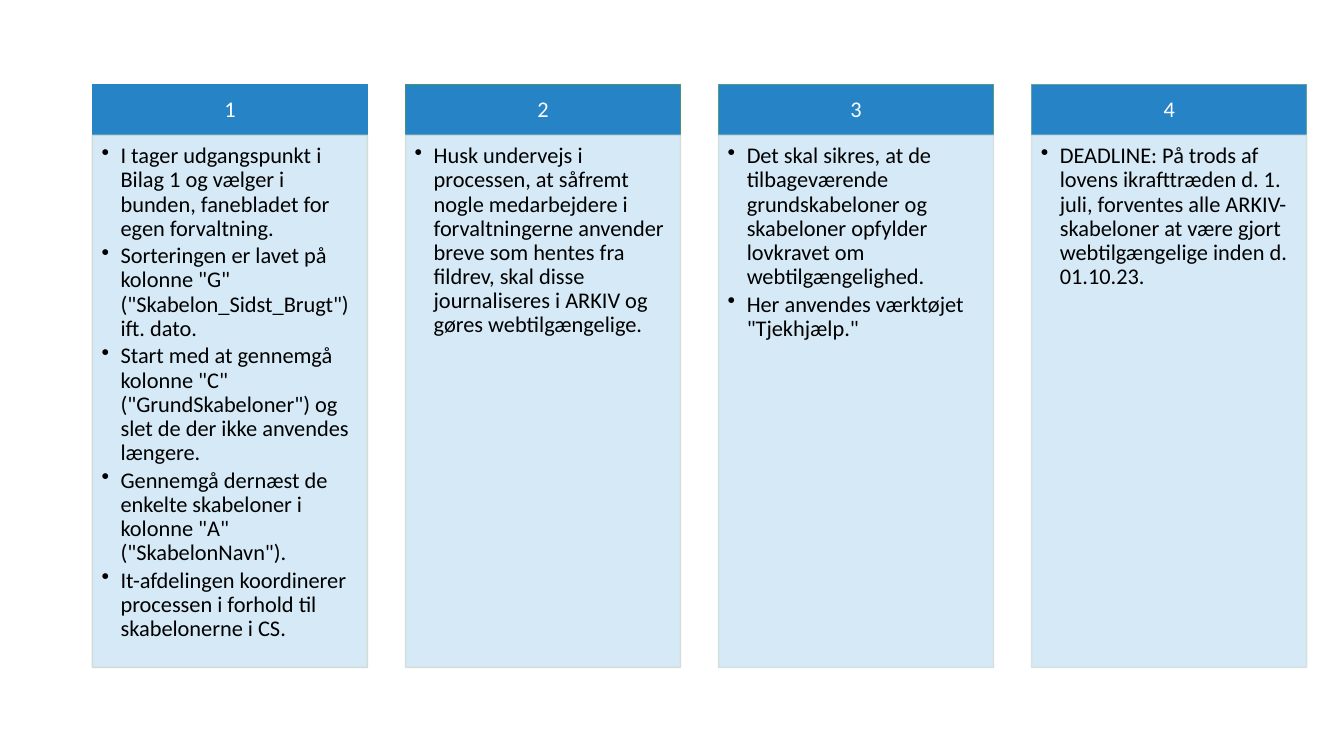
from pptx import Presentation
from pptx import util as u
from pptx.dml.color import RGBColor
from pptx.enum import shapes, text
from pptx.oxml.ns import qn
from lxml import etree

COLORS = {"head": "2683C6", "body": "D1E7F6", "light": "FFFFFF", "dark": "000000"}
LEFT, TOP, WIDTH, PITCH = 2.33, 2.13, 6.93, 7.89
HEAD, BODY = 1.28, 13.41

# Header outline, body outline, bullet points
STEPS = [
    ("2683C6", "CEDAD1", [
        "I tager udgangspunkt i Bilag 1 og vælger i bunden, fanebladet for egen forvaltning.",
        'Sorteringen er lavet på kolonne "G" ("Skabelon_Sidst_Brugt") ift. dato.',
        'Start med at gennemgå kolonne "C" ("GrundSkabeloner") og slet de der ikke '
        "anvendes længere.",
        'Gennemgå dernæst de enkelte skabeloner i kolonne "A" ("SkabelonNavn").',
        "It-afdelingen koordinerer processen i forhold til skabelonerne i CS.",
    ]),
    ("49926E", "D0DCD5", [
        "Husk undervejs i processen, at såfremt nogle medarbejdere i forvaltningerne "
        "anvender breve som hentes fra fildrev, skal disse journaliseres i ARKIV og "
        "gøres webtilgængelige.",
    ]),
    ("549C88", "D1DEDA", [
        "Det skal sikres, at de tilbageværende grundskabeloner og skabeloner opfylder "
        "lovkravet om webtilgængelighed.",
        'Her anvendes værktøjet "Tjekhjælp."',
    ]),
    ("62A39F", "D3E0DF", [
        "DEADLINE: På trods af lovens ikrafttræden d. 1. juli, forventes alle "
        "ARKIV-skabeloner at være gjort webtilgængelige inden d. 01.10.23.",
    ]),
]


def add_box(left, top, height, fill, edge, insets):
    box = slide.shapes.add_shape(shapes.MSO_SHAPE.RECTANGLE, u.Cm(left), u.Cm(top),
                                 u.Cm(WIDTH), u.Cm(height))
    box.shadow.inherit = False
    box.fill.solid()
    box.fill.fore_color.rgb = RGBColor.from_string(fill)
    box.line.color.rgb = RGBColor.from_string(edge)
    box.line.width = u.Pt(1)
    frame = box.text_frame
    frame.word_wrap = True
    (frame.margin_left, frame.margin_top,
     frame.margin_right, frame.margin_bottom) = map(u.Cm, insets)
    return box


def add_lines(frame, lines, color, align, after):
    for i, line in enumerate(lines):
        para = frame.paragraphs[0] if i == 0 else frame.add_paragraph()
        para.text = line
        para.alignment = align
        para.line_spacing = 0.9
        para.space_after = u.Pt(after)
        para.font.size = u.Pt(16)
        para.font.name = "Calibri"
        para.font.color.rgb = RGBColor.from_string(color)


deck = Presentation()
deck.slide_width, deck.slide_height = u.Cm(33.87), u.Cm(19.05)
slide = deck.slides.add_slide(deck.slide_layouts.get_by_name("Blank"))

for i, (head_edge, body_edge, points) in enumerate(STEPS):
    left = LEFT + i * PITCH
    head = add_box(left, TOP, HEAD, COLORS["head"], head_edge, (0.3, 0.18, 0.3, 0.18))
    head.text_frame.vertical_anchor = text.MSO_ANCHOR.MIDDLE
    add_lines(head.text_frame, [str(i + 1)], COLORS["light"], text.PP_ALIGN.CENTER, 5.6)

    body = add_box(left, TOP + HEAD, BODY, COLORS["body"], body_edge,
                   (0.23, 0.23, 0.3, 0.36))
    for color in body._element.spPr.iter(qn("a:srgbClr")):
        etree.SubElement(color, qn("a:alpha"), val="90000")
    body.text_frame.vertical_anchor = text.MSO_ANCHOR.TOP
    add_lines(body.text_frame, points, COLORS["dark"], text.PP_ALIGN.LEFT, 2.4)
    for para in body.text_frame.paragraphs:
        para.level = 1
        props = para._p.get_or_add_pPr()
        props.set("marL", str(u.Cm(0.48)))
        props.set("indent", str(-u.Cm(0.48)))
        bullet = etree.Element(qn("a:buChar"), char="•")
        props.find(qn("a:spcAft")).addnext(bullet)

deck.save("out.pptx")
